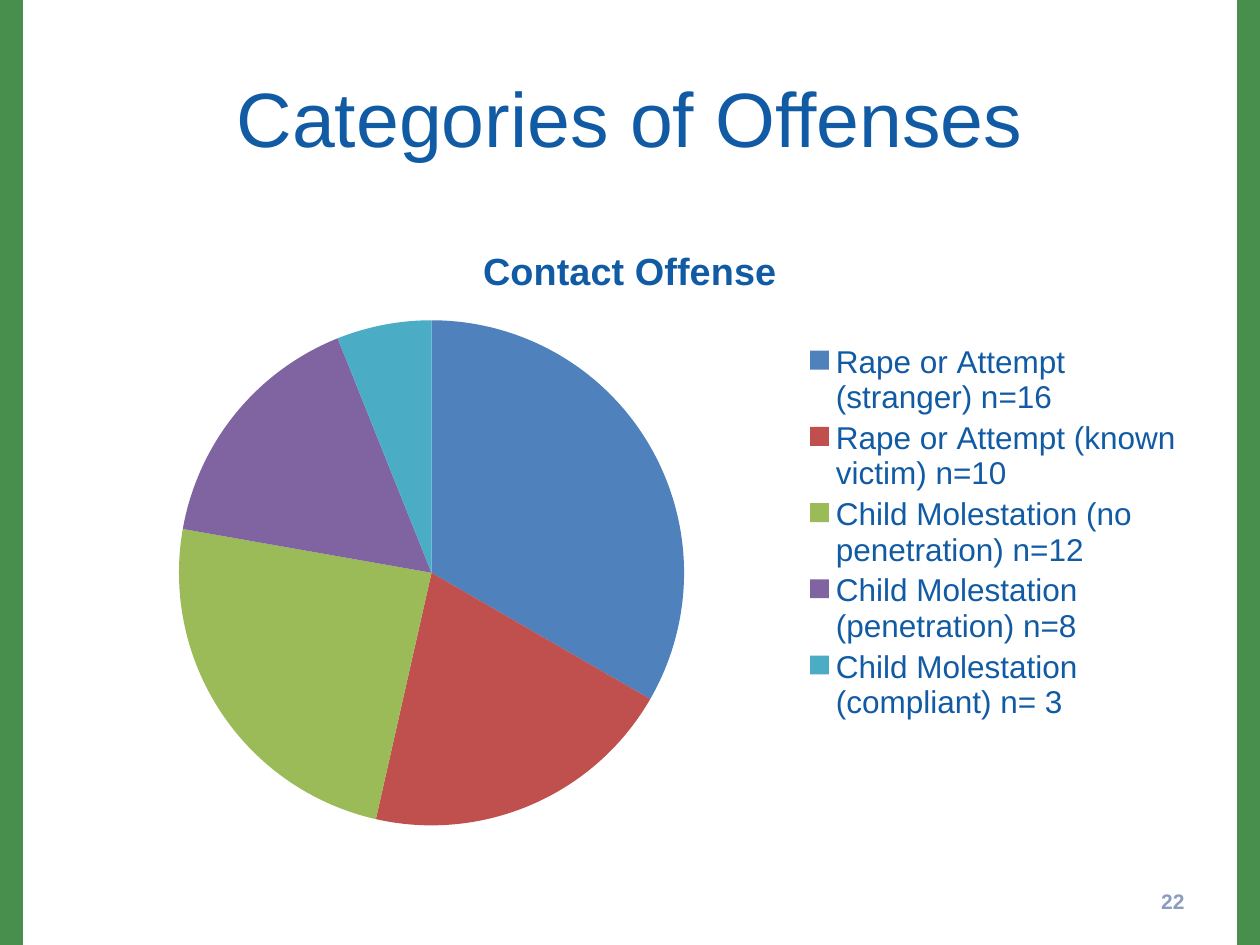
import pptx
import pptx.chart.data
import pptx.dml.color
import pptx.enum.chart
import pptx.enum.shapes
import pptx.enum.text
import pptx.oxml
import pptx.oxml.ns
import pptx.util

COLOURS = {"bar": "488F4D", "text": "115BA4", "number": "8C9BC0"}
OFFENSES = [
    ("Rape or Attempt (stranger) n=16", 33, "4F81BD"),
    ("Rape or Attempt (known victim) n=10", 20, "C0504D"),
    ("Child Molestation (no penetration) n=12", 24, "9BBB59"),
    ("Child Molestation (penetration) n=8", 16, "8064A2"),
    ("Child Molestation (compliant) n= 3", 6, "4BACC6"),
]


def style_font(font, size, colour, bold=False):
    font.name, font.size, font.bold = "Arial", pptx.util.Pt(size), bold
    font.color.rgb = pptx.dml.color.RGBColor.from_string(colour)


def layout_xml(x, y, w, h, target=""):
    """Return a manual chart layout, in shares of the chart's size."""
    return pptx.oxml.parse_xml(
        f'<c:layout {pptx.oxml.ns.nsdecls("c")}><c:manualLayout>{target}'
        '<c:xMode val="edge"/><c:yMode val="edge"/>'
        f'<c:x val="{x}"/><c:y val="{y}"/><c:w val="{w}"/><c:h val="{h}"/>'
        "</c:manualLayout></c:layout>")


deck = pptx.Presentation()
deck.slide_width, deck.slide_height = pptx.util.Inches(10), pptx.util.Inches(7.5)
page = deck.slides.add_slide(deck.slide_layouts[6])
width, height = deck.slide_width, deck.slide_height
margin = int(width * 0.05)
content_width = width - 2 * margin

# Side bars
bar_width = pptx.util.Inches(0.17)
for left in (width - bar_width, 0):
    bar = page.shapes.add_shape(
        pptx.enum.shapes.MSO_SHAPE.RECTANGLE, left, 0, bar_width, height)
    bar.shadow.inherit = False
    green = pptx.dml.color.RGBColor.from_string(COLOURS["bar"])
    bar.fill.solid()
    bar.fill.fore_color.rgb = green
    bar.line.color.rgb = green
    bar.line.width = pptx.util.Pt(2)

# Title and page number
align = pptx.enum.text.PP_ALIGN
number_width = pptx.util.Inches(2.33)
for words, left, top, box_width, box_height, side, size, colour, bold in (
    ("Categories of Offenses", margin, 0.3, content_width, 1.25,
     align.CENTER, 44, "text", False),
    ("22", width - margin - number_width, 6.95, number_width, 0.4,
     align.RIGHT, 12, "number", True),
):
    box = page.shapes.add_textbox(
        left, pptx.util.Inches(top), box_width, pptx.util.Inches(box_height))
    frame = box.text_frame
    frame.word_wrap = True
    frame.vertical_anchor = pptx.enum.text.MSO_ANCHOR.MIDDLE
    frame.text = words
    para = frame.paragraphs[0]
    para.alignment = side
    style_font(para.runs[0].font, size, COLOURS[colour], bold)

# Pie chart
data = pptx.chart.data.CategoryChartData()
data.categories = [name for name, value, colour in OFFENSES]
data.add_series("Contact Offense", [value for name, value, colour in OFFENSES])
chart = page.shapes.add_chart(
    pptx.enum.chart.XL_CHART_TYPE.PIE, margin, pptx.util.Inches(1.75),
    content_width, pptx.util.Inches(4.95), data).chart
style_font(chart.font, 18, COLOURS["text"])

chart.has_title = True
chart.chart_title.text_frame.text = "Contact Offense"
title_span = chart.chart_title.text_frame.paragraphs[0].runs[0]
style_font(title_span.font, 21.6, COLOURS["text"], True)

pie = chart.plots[0]
pie.vary_by_categories = True
for index, (name, value, colour) in enumerate(OFFENSES):
    fill = pie.series[0].points[index].format.fill
    fill.solid()
    fill.fore_color.rgb = pptx.dml.color.RGBColor.from_string(colour)

chart.has_legend = True
legend = chart.legend
legend.position = pptx.enum.chart.XL_LEGEND_POSITION.RIGHT
legend.include_in_layout = False
style_font(legend.font, 18, COLOURS["text"])

# Places of the pie and the legend within the chart
plot_area = chart.element.find(".//" + pptx.oxml.ns.qn("c:plotArea"))
legend_element = chart.element.find(".//" + pptx.oxml.ns.qn("c:legend"))
for parent in (plot_area, legend_element):
    for old in parent.findall(pptx.oxml.ns.qn("c:layout")):
        parent.remove(old)
plot_area.insert(0, layout_xml(0.1, 0.16, 0.45, 0.81, '<c:layoutTarget val="inner"/>'))
legend_element.insert(1, layout_xml(0.65, 0.19, 0.34, 0.62))

deck.save("out.pptx")
